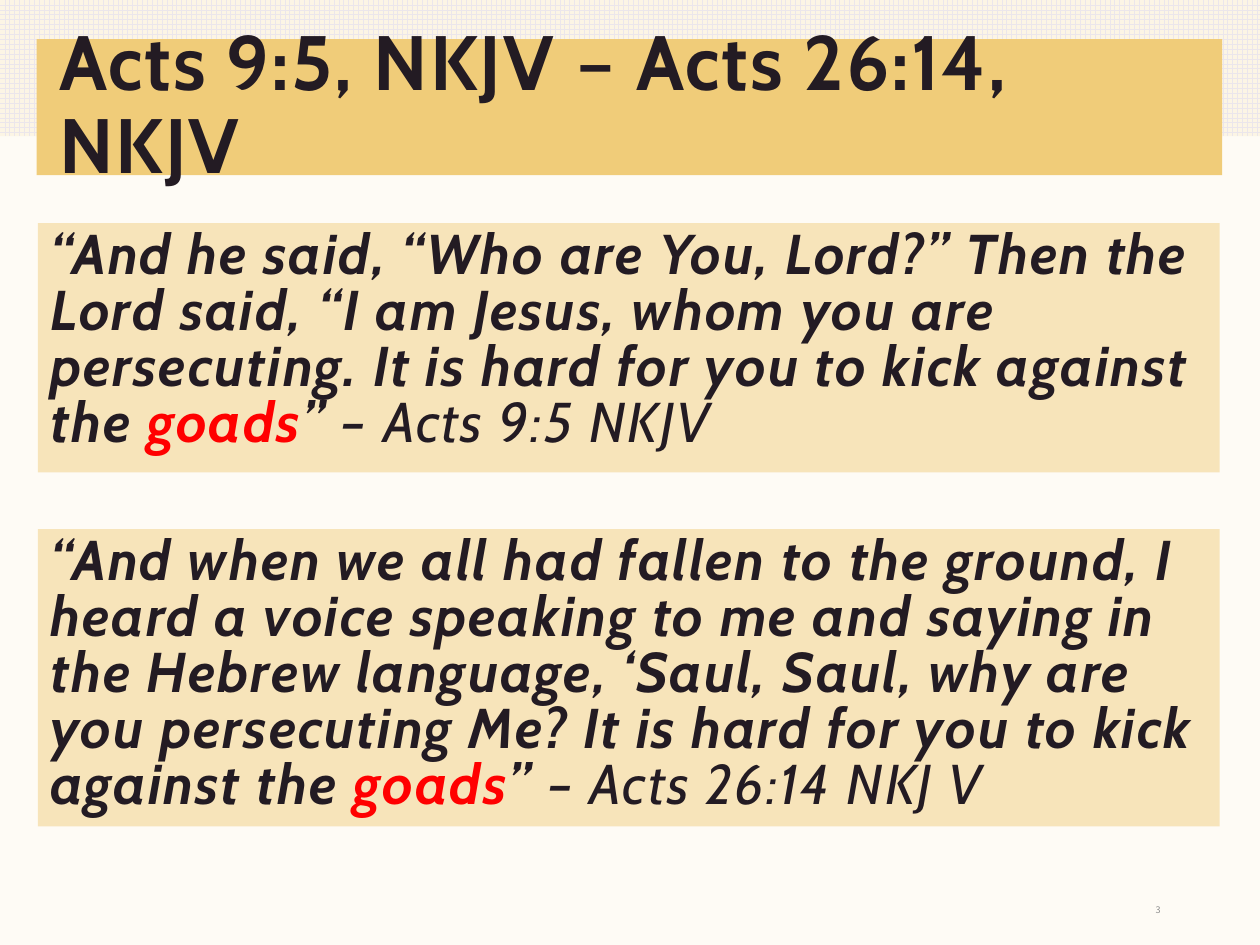
from dataclasses import dataclass

from pptx import Presentation
from pptx import util as u
from pptx.dml.color import RGBColor
from pptx.enum import dml, shapes, text


@dataclass(frozen=True)
class Theme:
    paper: str = "FEFBF5"
    cream: str = "FCF5E5"
    grid: str = "EBE6EB"
    gold: str = "F0CC79"
    sand: str = "F7E4BA"
    ink: str = "231B23"
    accent: str = "FF0000"
    muted: str = "8D8D8D"
    font: str = "Cabin"
    number_font: str = "Noto Sans CJK JP"
    title_size: float = 44
    verse_size: float = 32
    number_size: float = 5.2
    tracking: str = "110"


class VerseSlide:
    def __init__(self, deck, theme):
        self.theme = theme
        self.page = deck.slides.add_slide(deck.slide_layouts[5])
        self.paint(self.page.background.fill, theme.paper)

    def paint(self, fill, color):
        fill.solid()
        fill.fore_color.rgb = RGBColor.from_string(color)

    def band(self, left, top, width, height):
        box = self.page.shapes.add_shape(
            shapes.MSO_SHAPE.RECTANGLE,
            u.Inches(left), u.Inches(top), u.Inches(width), u.Inches(height))
        box.shadow.inherit = False
        box.line.fill.background()
        return box

    def grid_band(self, *frame):
        fill = self.band(*frame).fill
        fill.patterned()
        fill.pattern = dml.MSO_PATTERN.LARGE_GRID
        fill.fore_color.rgb = RGBColor.from_string(self.theme.grid)
        fill.back_color.rgb = RGBColor.from_string(self.theme.cream)

    def solid_band(self, *frame):
        self.paint(self.band(*frame).fill, self.theme.gold)

    def span(self, para, wording, size, color=None, bold=True, italic=False):
        span = para.add_run()
        span.text = wording
        span.font.name = self.theme.font
        span.font.size = u.Pt(size)
        span.font.bold = bold
        span.font.italic = italic
        span.font.color.rgb = RGBColor.from_string(color or self.theme.ink)
        span._r.get_or_add_rPr().set("spc", self.theme.tracking)

    def frame_text(self, box, anchor, align):
        frame = box.text_frame
        frame.word_wrap = True
        frame.auto_size = text.MSO_AUTO_SIZE.NONE
        frame.vertical_anchor = anchor
        para = frame.paragraphs[0]
        para.alignment = align
        return para

    def text_box(self, left, top, width, height):
        return self.page.shapes.add_textbox(
            u.Inches(left), u.Inches(top), u.Inches(width), u.Inches(height))

    def title(self, left, top, width, height, first, second):
        box = self.page.shapes.title
        box.left, box.top = u.Inches(left), u.Inches(top)
        box.width, box.height = u.Inches(width), u.Inches(height)
        box.element.getparent().append(box.element)
        para = self.frame_text(box, text.MSO_ANCHOR.MIDDLE, text.PP_ALIGN.LEFT)
        para.line_spacing = 0.9
        size = self.theme.title_size
        self.span(para, first + " ", size)
        self.span(para, "–", size, bold=False)
        self.span(para, " " + second, size)

    def verse(self, top, height, quote, keyword, reference):
        box = self.text_box(0.3, top, 9.38, height)
        self.paint(box.fill, self.theme.sand)
        para = self.frame_text(box, text.MSO_ANCHOR.TOP, text.PP_ALIGN.LEFT)
        size = self.theme.verse_size
        para.line_spacing = u.Pt(size)
        self.span(para, quote + " ", size, italic=True)
        self.span(para, keyword, size, self.theme.accent, italic=True)
        self.span(para, "” ", size, italic=True)
        self.span(para, "– " + reference, size, bold=False, italic=True)

    def number(self, wording):
        box = self.text_box(7.06, 7.1, 2.25, 0.25)
        para = self.frame_text(box, text.MSO_ANCHOR.MIDDLE, text.PP_ALIGN.RIGHT)
        span = para.add_run()
        span.text = wording
        span.font.name = self.theme.number_font
        span.font.size = u.Pt(self.theme.number_size)
        span.font.color.rgb = RGBColor.from_string(self.theme.muted)


def main():
    deck = Presentation()
    deck.slide_width, deck.slide_height = u.Inches(10), u.Inches(7.5)
    slide = VerseSlide(deck, Theme())
    slide.grid_band(0, 0, 10, 1.08)
    slide.solid_band(0.29, 0.31, 9.41, 1.08)
    slide.number("3")
    slide.title(0.37, 0.53, 9.25, 0.64, "Acts 9:5, NKJV", "Acts 26:14, NKJV")
    slide.verse(
        1.77, 1.98,
        "“And he said, “Who are You, Lord?” Then the Lord said, “I am Jesus, "
        "whom you are persecuting. It is hard for you to kick against the",
        "goads", "Acts 9:5 NKJV")
    slide.verse(
        4.2, 2.36,
        "“And when we all had fallen to the ground, I heard a voice speaking "
        "to me and saying in the Hebrew language, ‘Saul, Saul, why are you "
        "persecuting Me? It is hard for you to kick against the",
        "goads", "Acts 26:14 NKJ V")
    deck.save("out.pptx")


if __name__ == "__main__":
    main()
